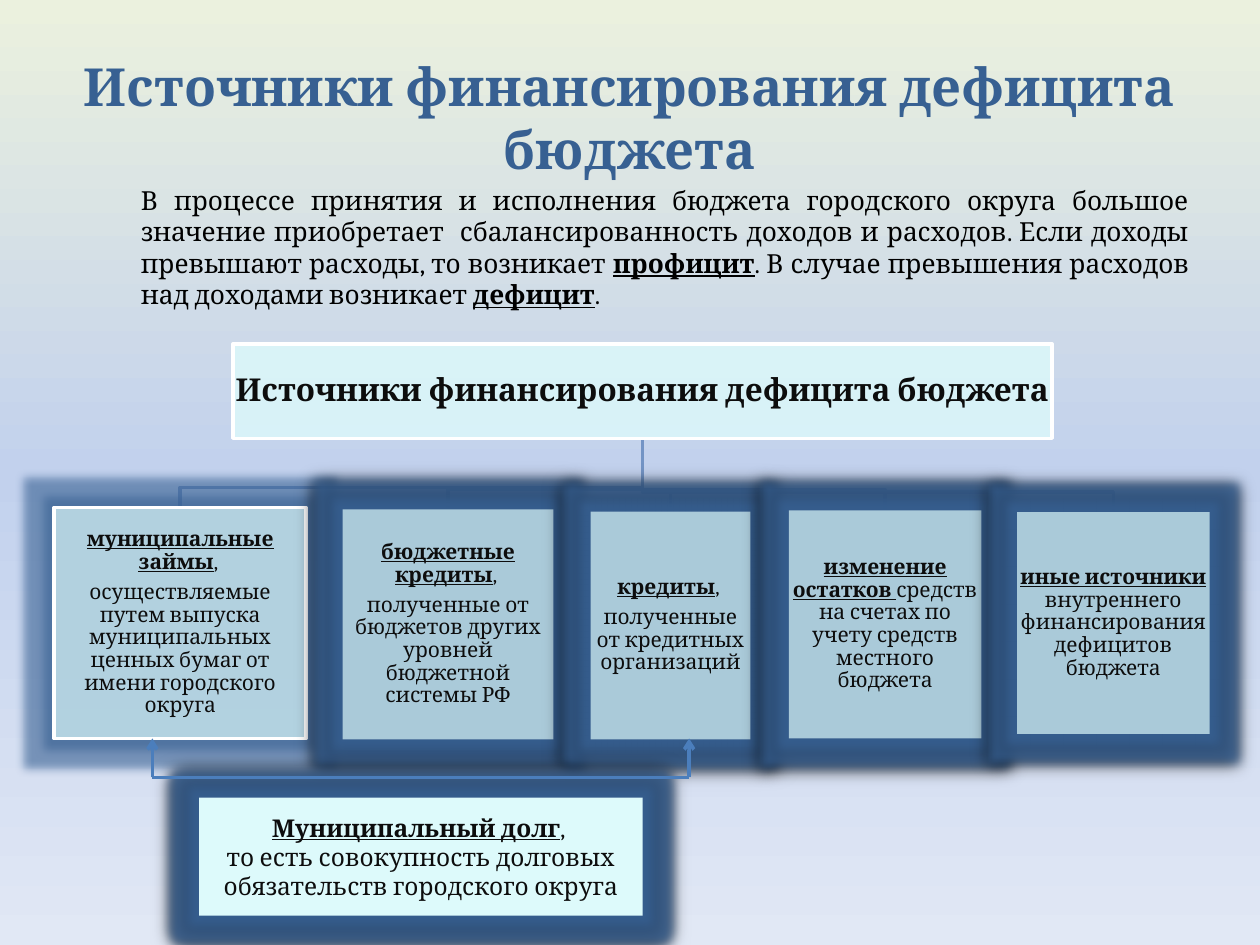
import pptx
import pptx.util
import pptx.dml.color
import pptx.enum.shapes
import pptx.enum.text
import pptx.oxml
import pptx.oxml.ns
import copy
from lxml import etree

Pt = pptx.util.Pt
qn = pptx.oxml.ns.qn
ALIGN = pptx.enum.text.PP_ALIGN
ANCHOR = pptx.enum.text.MSO_ANCHOR
FONT = "Cambria"
COLORS = {
    "sky_top": "EBF1DE", "sky_mid": "C2D1ED", "sky_bottom": "E1E8F5",
    "title": "376092", "body": "000000", "ink": "0D0D0D",
    "box": "DDFAFB", "border": "FFFFFF", "glow": "376092", "shadow": "000000",
    "branch": "7394C5", "arrow": "4B7EBC",
}

# left, top, width, height, glow opacity, paragraphs
SOURCES = [
    (31, 290, 144, 132, 60,
     ["*муниципальные займы*, ",
      "осуществляемые путем выпуска муниципальных ценных бумаг от имени городского округа"]),
    (195.8, 291, 120.5, 131.5, 80,
     ["*бюджетные кредиты*, ",
      "полученные от бюджетов других уровней бюджетной системы РФ"]),
    (337.5, 292.3, 91.3, 130.2, 80,
     ["*кредиты*, ", "полученные от кредитных организаций"]),
    (450.8, 291.6, 110, 130.4, 80,
     ["*изменение остатков *средств на счетах по учету средств местного бюджета"]),
    (581.2, 292.6, 110, 126.8, 80,
     ["*иные источники* внутреннего финансирования дефицитов бюджета"]),
]


def rgb(name):
    return pptx.dml.color.RGBColor.from_string(COLORS[name])


def write_text(sp, paragraphs, size, color="ink", bold=False, align=ALIGN.CENTER,
               anchor=ANCHOR.MIDDLE, inset=None, spacing=None, after=0):
    """Fill a shape with paragraphs; *marked* parts are bold and underlined."""
    tf = sp.text_frame
    tf.word_wrap = True
    tf.vertical_anchor = anchor
    if inset is not None:
        tf.margin_left = tf.margin_right = tf.margin_top = tf.margin_bottom = Pt(inset)
    for i, text in enumerate(paragraphs):
        p = tf.paragraphs[0] if i == 0 else tf.add_paragraph()
        p.alignment = align
        p.line_spacing = spacing
        p.space_after = Pt(after)
        for j, part in enumerate(text.split("*")):
            if not part:
                continue
            r = p.add_run()
            r.text = part
            r.font.name = FONT
            r.font.size = Pt(size)
            r.font.color.rgb = rgb(color)
            r.font.bold = bold or j % 2 == 1
            r.font.underline = j % 2 == 1


def add_color(parent, name, alpha):
    clr = etree.SubElement(parent, qn("a:srgbClr"), val=COLORS[name])
    etree.SubElement(clr, qn("a:alpha"), val=str(alpha * 1000))


def add_box(s, left, top, width, height, opacity=100, border=False, glow=0, shadow=False):
    sp = s.shapes.add_shape(pptx.enum.shapes.MSO_SHAPE.RECTANGLE,
                            Pt(left), Pt(top), Pt(width), Pt(height))
    sp.shadow.inherit = False
    sp.fill.solid()
    sp.fill.fore_color.rgb = rgb("box")
    if opacity < 100:
        clr = sp.fill._xPr.find(".//" + qn("a:srgbClr"))
        etree.SubElement(clr, qn("a:alpha"), val=str(opacity * 1000))
    if border:
        sp.line.color.rgb = rgb("border")
        sp.line.width = Pt(2)
    else:
        sp.line.fill.background()
    effects = sp._element.spPr.find(qn("a:effectLst"))
    if glow:
        add_color(etree.SubElement(effects, qn("a:glow"), rad=str(Pt(11))), "glow", glow)
    if shadow:
        outer = etree.SubElement(effects, qn("a:outerShdw"), blurRad=str(Pt(8.5)),
                                 dist=str(Pt(1)), dir="5400000", rotWithShape="0")
        add_color(outer, "shadow", 100)
    return sp


def add_background(s):
    fill = s.background.fill
    fill.gradient()
    fill.gradient_angle = 270
    first, last = fill.gradient_stops
    first.color.rgb = rgb("sky_top")
    last.color.rgb = rgb("sky_bottom")
    mid = copy.deepcopy(first._gs)
    mid.set("pos", "50000")
    mid.find(qn("a:srgbClr")).set("val", COLORS["sky_mid"])
    first._gs.addnext(mid)


def add_textbox(s, left, top, width, height, paragraphs, **fmt):
    sp = s.shapes.add_textbox(Pt(left), Pt(top), Pt(width), Pt(height))
    write_text(sp, paragraphs, **fmt)


def add_branch(s, x1, y1, x2, y2):
    """Draw an elbow from a parent's bottom to a child's top."""
    bend = y2 - 11.5
    fb = s.shapes.build_freeform(Pt(x1), Pt(y1))
    fb.add_line_segments([(Pt(x), Pt(y)) for x, y in ((x1, bend), (x2, bend), (x2, y2))],
                         close=False)
    sp = fb.convert_to_shape()
    sp.shadow.inherit = False
    sp.fill.background()
    sp.line.color.rgb = rgb("branch")
    sp.line.width = Pt(2)


def add_tree(s, left, top, width, height):
    for x, y, w, _, _, _ in reversed(SOURCES):
        add_branch(s, left + width / 2, top + height, x + w / 2, y)
    root = add_box(s, left, top, width, height, opacity=80, border=True)
    write_text(root, ["Источники финансирования дефицита бюджета"], size=18, bold=True,
               inset=0.72, spacing=0.9)
    for i, (x, y, w, h, glow, paragraphs) in enumerate(SOURCES):
        sp = add_box(s, x, y, w, h, opacity=70, border=i == 0, glow=glow, shadow=i > 0)
        write_text(sp, paragraphs, size=12, inset=0.72, spacing=0.9, after=4.2)


def add_line(s, x1, y1, x2, y2, arrow=False):
    cx = s.shapes.add_connector(pptx.enum.shapes.MSO_CONNECTOR.STRAIGHT,
                                Pt(x1), Pt(y1), Pt(x2), Pt(y2))
    cx.line.color.rgb = rgb("arrow")
    cx.line.width = Pt(2)
    if arrow:
        etree.SubElement(cx.line._get_or_add_ln(), qn("a:tailEnd"), type="arrow")
    etree.SubElement(cx._element.spPr, qn("a:effectLst"))


def add_debt_bracket(s, left, top, width, height):
    """Join two upward arrows with a bar along the bottom."""
    bottom = top + height
    add_line(s, left, bottom, left + width, bottom)
    for x in (left, left + width):
        add_line(s, x, bottom, x, top, arrow=True)


def main():
    prs = pptx.Presentation()
    prs.slide_width, prs.slide_height = Pt(720), Pt(540)
    s = prs.slides.add_slide(prs.slide_layouts[6])
    add_background(s)
    add_textbox(s, 36, 21.6, 648, 90, ["Источники финансирования дефицита бюджета"],
                size=30, color="title", bold=True)
    add_tree(s, 133.2, 196.5, 468, 54)
    debt = add_box(s, 113.8, 455.8, 253.4, 67.4, glow=80, shadow=True)
    write_text(debt, ["*Муниципальный долг*, ",
                      "то есть совокупность долговых обязательств городского округа"], size=14)
    add_debt_bracket(s, 87.1, 422, 306.7, 22.3)
    add_textbox(s, 73.4, 101.5, 613.4, 80,
                ["В процессе принятия и исполнения бюджета городского округа большое значение "
                 "приобретает  сбалансированность доходов и расходов. Если доходы превышают "
                 "расходы, то возникает *профицит*. В случае превышения расходов над доходами "
                 "возникает *дефицит*."],
                size=15, color="body", align=ALIGN.JUSTIFY, anchor=ANCHOR.TOP)
    prs.save("out.pptx")


if __name__ == "__main__":
    main()
